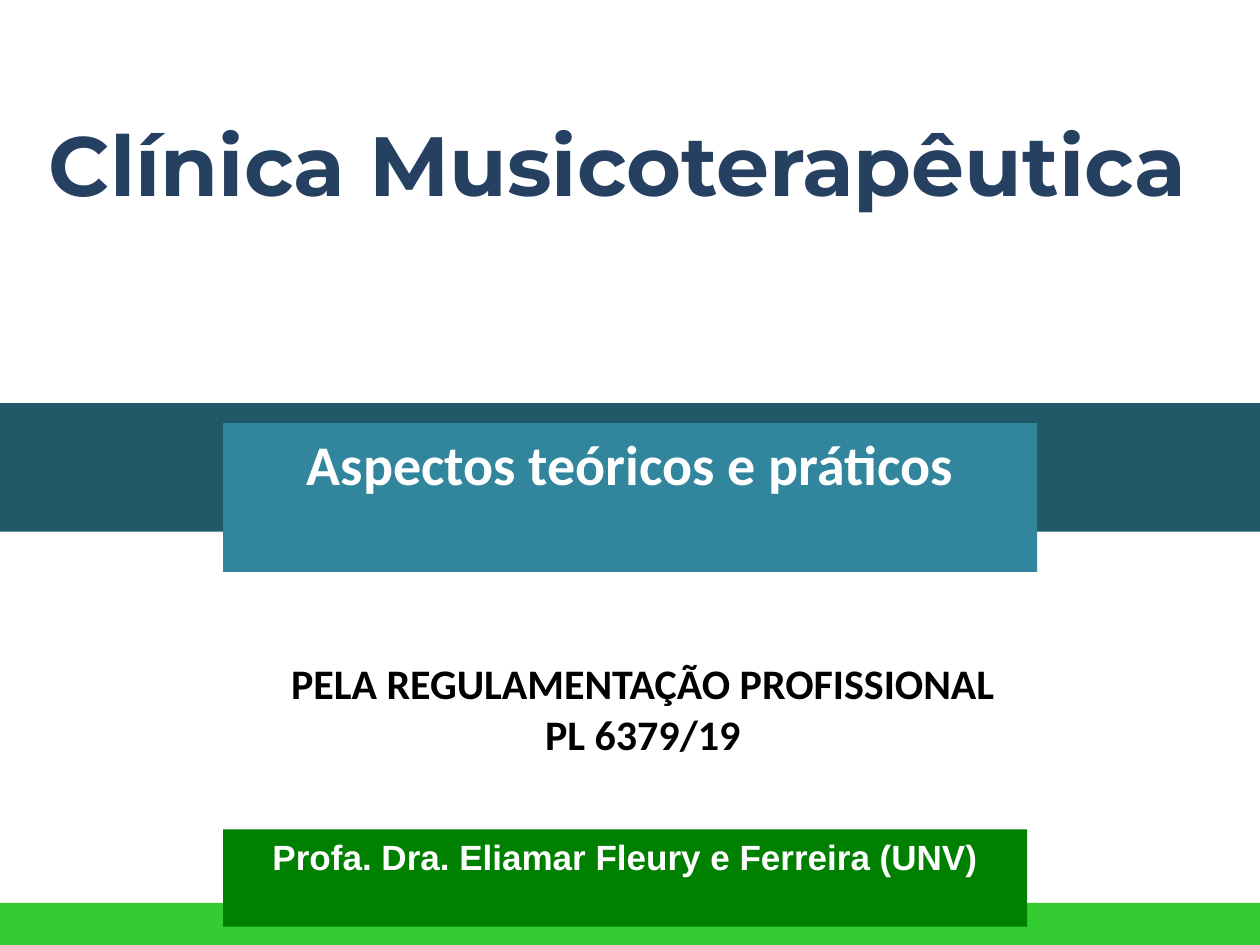
from pptx import Presentation
from pptx.dml.color import RGBColor
from pptx.enum import shapes, text
from pptx.util import Cm, Pt

WIDTH, HEIGHT = 25.4, 19.05
LABEL_LEFT = 4.5


def paint(color_format, value):
    color_format.rgb = RGBColor.from_string(value)


def write(shape, lines, color, **font):
    """Fill a shape with centred bold lines, starting at its top."""
    frame = shape.text_frame
    frame_format = {
        "word_wrap": True,
        "auto_size": text.MSO_AUTO_SIZE.NONE,
        "vertical_anchor": text.MSO_ANCHOR.TOP,
        "margin_left": Cm(0.25),
        "margin_right": Cm(0.25),
        "margin_top": Cm(0.13),
        "margin_bottom": Cm(0.13),
    }
    for name, value in frame_format.items():
        setattr(frame, name, value)
    for index, line in enumerate(lines):
        paragraph = frame.add_paragraph() if index else frame.paragraphs[0]
        paragraph.alignment = text.PP_ALIGN.CENTER
        run = paragraph.add_run()
        run.text = line
        for name, value in {"bold": True, **font}.items():
            setattr(run.font, name, value)
        paint(run.font.color, color)


def add_block(slide, box, fill):
    block = slide.shapes.add_shape(
        shapes.MSO_SHAPE.RECTANGLE, *(Cm(length) for length in box))
    block.shadow.inherit = False
    block.fill.solid()
    paint(block.fill.fore_color, fill)
    block.line.fill.background()
    return block


def add_heading(slide, box):
    heading = slide.shapes.title
    for name, length in zip(("left", "top", "width", "height"), box):
        setattr(heading, name, Cm(length))
    write(heading, ["Clínica Musicoterapêutica"], "254061",
          name="Montserrat", size=Pt(48))


def add_banner(slide, box, band, label, line, **font):
    """Full-width band, with a label block placed relative to the band."""
    left, top, width, height = box
    label_left, label_drop, label_width, label_height, label_fill = label
    add_block(slide, (left, top, width, height), band)
    block = add_block(
        slide,
        (left + label_left, top + label_drop, label_width, label_height),
        label_fill)
    write(block, [line], "FFFFFF", **font)


def add_motto(slide, box):
    motto = slide.shapes.add_textbox(*(Cm(length) for length in box))
    write(motto, ["PELA REGULAMENTAÇÃO PROFISSIONAL", "PL 6379/19"],
          "000000", name="Calibri", size=Pt(24))


def build_cover(presentation):
    slide = presentation.slides.add_slide(presentation.slide_layouts[5])
    add_heading(slide, (0.1, 2.13, 24.69, 4.37))
    add_banner(slide, (0, 8.13, WIDTH, 2.59), "215968",
               (LABEL_LEFT, 0.4, 16.41, 3, "31859C"),
               "Aspectos teóricos e práticos", name="Calibri", size=Pt(32))
    add_motto(slide, (3.51, 13.13, 18.9, 2.31))
    add_banner(slide, (0, 18.2, WIDTH, HEIGHT - 18.2), "33CC33",
               (LABEL_LEFT, -1.48, 16.21, 1.96, "008000"),
               "Profa. Dra. Eliamar Fleury e Ferreira (UNV)",
               name="Arial", size=Pt(20))


def main():
    presentation = Presentation()
    presentation.slide_width = Cm(WIDTH)
    presentation.slide_height = Cm(HEIGHT)
    build_cover(presentation)
    presentation.save("out.pptx")


if __name__ == "__main__":
    main()
